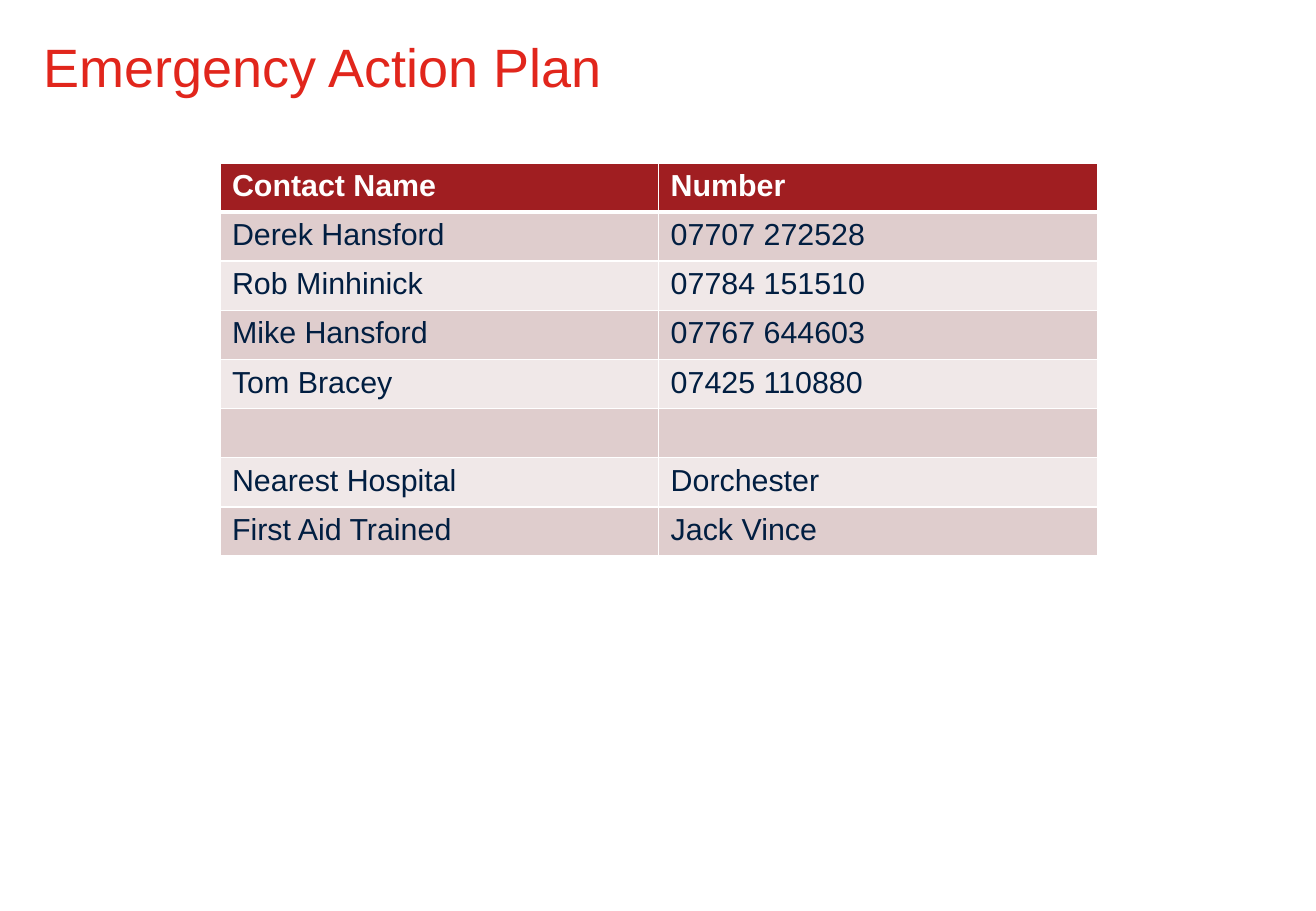
from dataclasses import dataclass

from lxml import etree
from pptx import Presentation
from pptx.dml.color import RGBColor
from pptx.enum.text import MSO_ANCHOR
from pptx.oxml.ns import qn
from pptx.table import _Cell
from pptx.text.text import TextFrame
from pptx.util import Inches, Pt

TOP = MSO_ANCHOR.TOP
FONT = "Arial"
COLORS = {
    "white": "FFFFFF",
    "title": "E1261C",
    "header": "A01E21",
    "dark_band": "DFCDCD",
    "light_band": "F0E8E8",
    "text": "011E41",
}


@dataclass
class Contact:
    name: str
    number: str


HEADING = Contact("Contact Name", "Number")
CONTACTS = [
    Contact("Derek Hansford", "07707 272528"),
    Contact("Rob Minhinick", "07784 151510"),
    Contact("Mike Hansford", "07767 644603"),
    Contact("Tom Bracey", "07425 110880"),
    Contact("", ""),
    Contact("Nearest Hospital", "Dorchester"),
    Contact("First Aid Trained", "Jack Vince"),
]


def rgb(name: str) -> RGBColor:
    return RGBColor.from_string(COLORS[name])


def write_text(frame: TextFrame, text: str, *, size: float, color: str,
               bold: bool = False, line_spacing: float = 1.0) -> None:
    paragraph = frame.paragraphs[0]
    paragraph.line_spacing = line_spacing
    run = paragraph.add_run()
    run.text = text
    run.font.name = FONT
    run.font.size = Pt(size)
    run.font.bold = bold
    run.font.color.rgb = rgb(color)


def set_borders(cell: _Cell, top: float, bottom: float) -> None:
    properties = cell._tc.get_or_add_tcPr()
    for side, width in (("L", 1), ("R", 1), ("T", top), ("B", bottom)):
        line = etree.SubElement(properties, qn(f"a:ln{side}"), w=str(Pt(width)))
        fill = etree.SubElement(line, qn("a:solidFill"))
        etree.SubElement(fill, qn("a:srgbClr"), val=COLORS["white"])


def add_title(slide) -> None:
    title = slide.shapes.add_textbox(Inches(0.26), Inches(0.29), Inches(5.43), Inches(1.05))
    title.fill.solid()
    title.fill.fore_color.rgb = rgb("white")
    title.text_frame.word_wrap = True
    title.text_frame.vertical_anchor = TOP
    write_text(title.text_frame, "Emergency Action Plan", size=32, color="title", line_spacing=0.9)


def add_contact_table(slide) -> None:
    rows = [HEADING, *CONTACTS]
    table = slide.shapes.add_table(len(rows), 2, Inches(1.81), Inches(1.34),
                                   Inches(7.22), Inches(3.24)).table
    for row_index, contact in enumerate(rows):
        is_header = row_index == 0
        band = "dark_band" if row_index % 2 else "light_band"
        for column_index, text in enumerate((contact.name, contact.number)):
            cell = table.cell(row_index, column_index)
            set_borders(cell, top=3 if row_index == 1 else 1, bottom=3 if is_header else 1)
            cell.fill.solid()
            cell.fill.fore_color.rgb = rgb("header" if is_header else band)
            if text:
                write_text(cell.text_frame, text, size=18, bold=is_header,
                           color="white" if is_header else "text")


def main() -> None:
    presentation = Presentation()
    presentation.slide_width = Inches(10.83)
    presentation.slide_height = Inches(7.5)
    slide = presentation.slides.add_slide(presentation.slide_layouts[6])
    add_title(slide)
    add_contact_table(slide)
    presentation.save("out.pptx")


if __name__ == "__main__":
    main()
